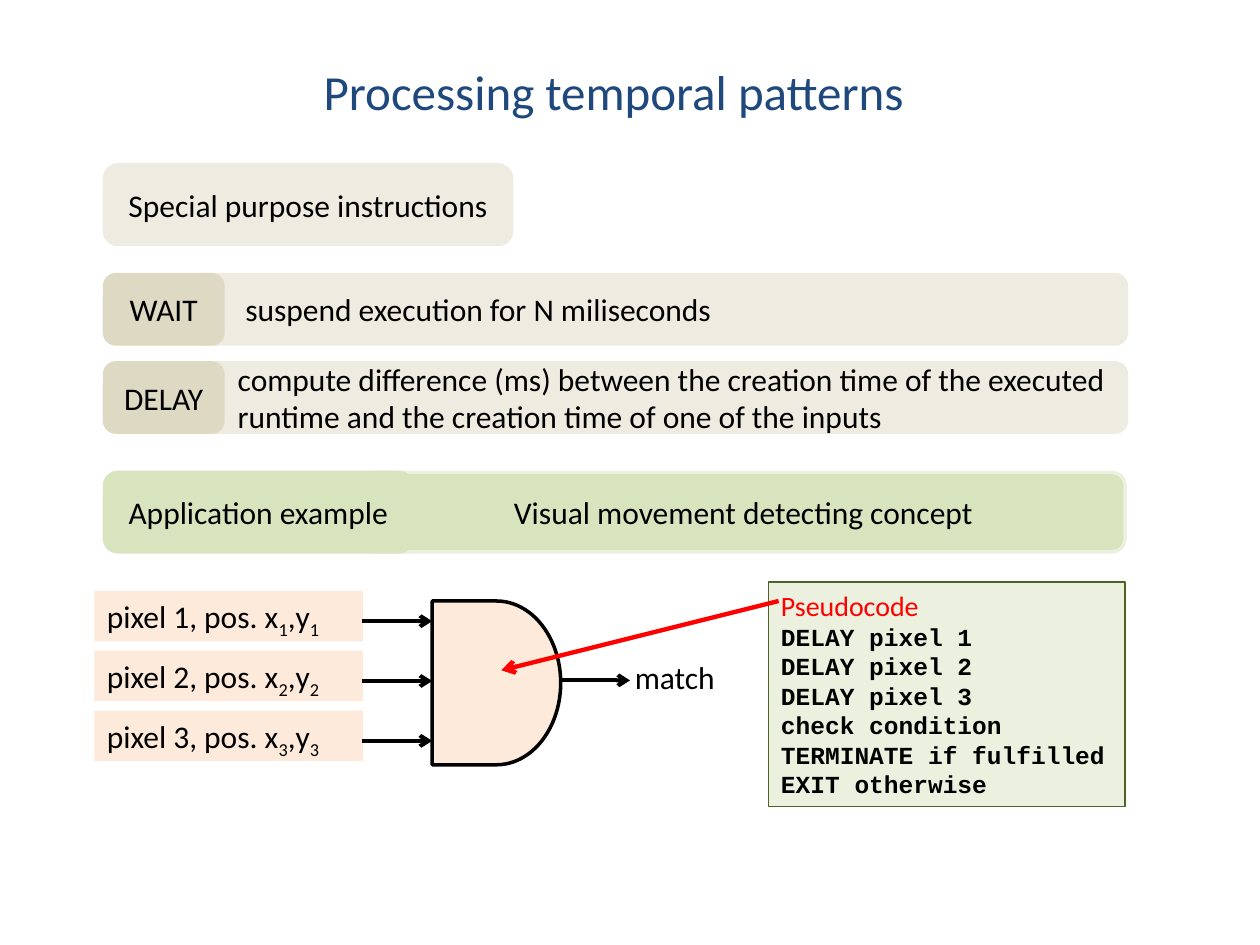
from dataclasses import dataclass
from typing import Optional

from lxml import etree
from pptx import Presentation
from pptx.dml.color import RGBColor
from pptx.enum import shapes, text
from pptx.oxml.ns import qn
from pptx.util import Inches, Pt


@dataclass(frozen=True)
class Theme:
    body_font: str = "Calibri"
    code_font: str = "Courier New"
    title_size: float = 28
    body_size: float = 18
    heading_size: float = 16
    code_size: float = 14
    title: str = "1F497D"
    ink: str = "000000"
    accent: str = "FF0000"
    sand: str = "EEECE1"
    dark_sand: str = "DDD9C3"
    green: str = "D7E4BD"
    pale_green: str = "EBF1DE"
    dark_green: str = "4F6228"
    peach: str = "FDEADA"


THEME = Theme()
SHAPE = shapes.MSO_SHAPE
LEFT, CENTER = text.PP_ALIGN.LEFT, text.PP_ALIGN.CENTER


@dataclass(frozen=True)
class Box:
    left: float
    top: float
    width: float
    height: float
    fill: str
    line: Optional[str] = None
    line_width: float = 2
    kind: SHAPE = SHAPE.ROUNDED_RECTANGLE


@dataclass(frozen=True)
class Arrow:
    start: tuple[float, float]
    end: tuple[float, float]
    color: str = THEME.ink
    width: float = 2.25


def rgb(color: str) -> RGBColor:
    return RGBColor.from_string(color)


def style(paragraph, size: float = THEME.body_size, color: str = THEME.ink,
          font: str = THEME.body_font, bold: bool = False, align=LEFT) -> None:
    paragraph.alignment = align
    for run in paragraph.runs:
        run.font.name, run.font.size, run.font.bold = font, Pt(size), bold
        run.font.color.rgb = rgb(color)


def draw_box(slide, box: Box):
    shape = slide.shapes.add_shape(box.kind, Inches(box.left), Inches(box.top),
                                   Inches(box.width), Inches(box.height))
    shape.shadow.inherit = False
    shape.fill.solid()
    shape.fill.fore_color.rgb = rgb(box.fill)
    if box.line:
        shape.line.color.rgb = rgb(box.line)
        shape.line.width = Pt(box.line_width)
    else:
        shape.line.fill.background()
    return shape


def draw_label(slide, box: Box, words: str, align=CENTER, indent: float = 0.1) -> None:
    frame = draw_box(slide, box).text_frame
    frame.vertical_anchor = text.MSO_ANCHOR.MIDDLE
    frame.margin_left = Inches(indent)
    frame.text = words
    style(frame.paragraphs[0], align=align)


def draw_caption(slide, left: float, top: float, width: float, height: float,
                 words: str, **look) -> None:
    frame = slide.shapes.add_textbox(Inches(left), Inches(top),
                                     Inches(width), Inches(height)).text_frame
    frame.word_wrap = False
    frame.auto_size = text.MSO_AUTO_SIZE.SHAPE_TO_FIT_TEXT
    frame.text = words
    style(frame.paragraphs[0], **look)


def grow_frame(shape):
    frame = shape.text_frame
    frame.auto_size = text.MSO_AUTO_SIZE.SHAPE_TO_FIT_TEXT
    frame.vertical_anchor = text.MSO_ANCHOR.TOP
    return frame


def draw_pixel(slide, box: Box, number: int) -> None:
    paragraph = grow_frame(draw_box(slide, box)).paragraphs[0]
    for words, lowered in ((f"pixel {number}, pos. x", False), (str(number), True),
                           (",y", False), (str(number), True)):
        run = paragraph.add_run()
        run.text = words
        if lowered:
            run.font._element.set("baseline", "-25000")
    style(paragraph)


def draw_arrow(slide, arrow: Arrow) -> None:
    points = [Inches(value) for value in (*arrow.start, *arrow.end)]
    connector = slide.shapes.add_connector(shapes.MSO_CONNECTOR.STRAIGHT, *points)
    connector.line.color.rgb = rgb(arrow.color)
    connector.line.width = Pt(arrow.width)
    etree.SubElement(connector.line._get_or_add_ln(), qn("a:tailEnd"), type="arrow")
    etree.SubElement(connector._element.spPr, qn("a:effectLst"))


def main() -> None:
    deck = Presentation()
    deck.slide_width, deck.slide_height = Inches(10), Inches(7.5)
    slide = deck.slides.add_slide(deck.slide_layouts[6])
    t = THEME
    margin = 0.83

    # Title and section headings
    draw_caption(slide, 2.44, 0.44, 4.86, 0.57, "Processing temporal patterns",
                 size=t.title_size, color=t.title, align=CENTER)
    draw_label(slide, Box(margin, 1.31, 3.23, 0.63, t.sand, t.sand),
               "Special purpose instructions")
    draw_label(slide, Box(2.87, 3.75, 6.06, 0.63, t.green, t.pale_green),
               "Visual movement detecting concept")
    draw_label(slide, Box(margin, 3.75, 2.44, 0.63, t.green, t.green),
               "Application example")

    # Instructions with their meaning
    instructions = (
        ("WAIT", "suspend execution for N miliseconds", 0.38),
        ("DELAY", "compute difference (ms) between the creation time of the executed\v"
                  "runtime and the creation time of one of the inputs", 0.32),
    )
    for row, (name, meaning, indent) in enumerate(instructions):
        top = 2.18 + row * 0.7
        draw_label(slide, Box(1.54, top, 7.4, 0.55, t.sand, t.sand), meaning, LEFT, indent)
        draw_label(slide, Box(margin, top, 0.94, 0.55, t.dark_sand, t.dark_sand), name)

    # Gate with pixel inputs and match output
    gate = Box(3.43, 4.77, 1.02, 1.3, t.peach, t.ink, kind=SHAPE.FLOWCHART_DELAY)
    draw_box(slide, gate)
    pitch = 0.475
    for row in range(3):
        top = 4.69 + row * pitch
        pixel = Box(0.75, top, 2.13, 0.4, t.peach, kind=SHAPE.RECTANGLE)
        draw_pixel(slide, pixel, row + 1)
        draw_arrow(slide, Arrow((2.87, top + 0.24), (gate.left, top + 0.24)))
    draw_arrow(slide, Arrow((gate.left + gate.width, 5.4), (5, 5.4)))
    draw_caption(slide, 4.94, 5.17, 0.84, 0.4, "match")

    # Pseudocode run by the gate
    code = Box(6.1, 4.62, 2.83, 1.78, t.pale_green, t.dark_green, 0.75, SHAPE.RECTANGLE)
    frame = grow_frame(draw_box(slide, code))
    frame.text = "\n".join(("Pseudocode", "DELAY pixel 1", "DELAY pixel 2", "DELAY pixel 3",
                            "check condition", "TERMINATE if fulfilled", "EXIT otherwise"))
    heading, *steps = frame.paragraphs
    style(heading, t.heading_size, t.accent)
    for step in steps:
        style(step, t.code_size, font=t.code_font, bold=True)
    draw_arrow(slide, Arrow((6.18, 4.77), (3.98, 5.32), t.accent, 2.5))

    deck.save("out.pptx")


if __name__ == "__main__":
    main()
